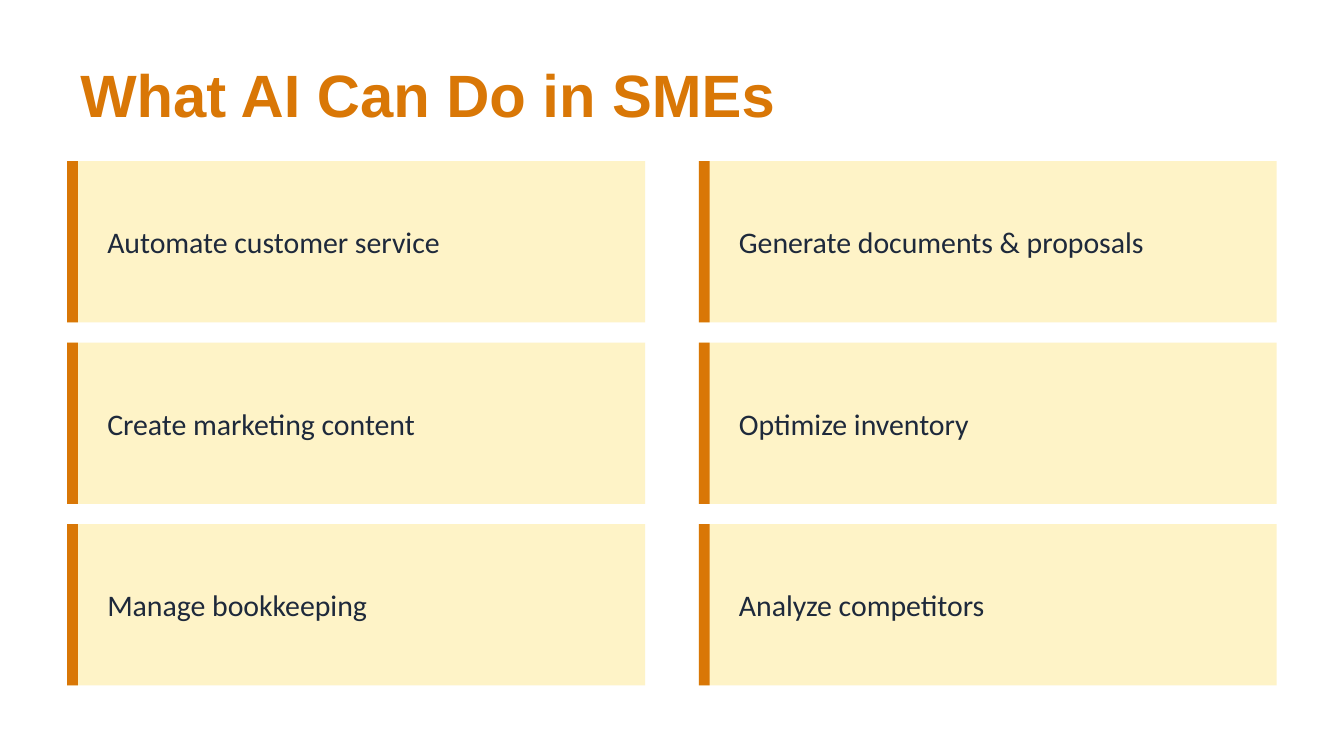
"""Build a slide of six tasks that AI can take on in small firms."""
from pptx import Presentation
from pptx.dml.color import RGBColor
from pptx.enum.shapes import MSO_SHAPE
from pptx.enum.text import MSO_ANCHOR
from pptx.util import Inches, Pt

ORANGE = "D97706"
CREAM = "FEF3C7"
NAVY = "1E293B"
TASKS = [
    ["Automate customer service", "Create marketing content", "Manage bookkeeping"],
    ["Generate documents & proposals", "Optimize inventory", "Analyze competitors"],
]


def color(code):
    """Turn a hex string into a colour."""
    return RGBColor.from_string(code)


def add_bar(slide, left, top, width, height, fill):
    """Add a plain filled rectangle."""
    bar = slide.shapes.add_shape(
        MSO_SHAPE.RECTANGLE, Inches(left), Inches(top), Inches(width), Inches(height)
    )
    bar.shadow.inherit = False
    bar.fill.solid()
    bar.fill.fore_color.rgb = color(fill)
    bar.line.fill.background()


def add_text(slide, left, top, width, height, words, size, face, ink, bold=False):
    """Add one line of text, centred vertically in its box."""
    box = slide.shapes.add_textbox(
        Inches(left), Inches(top), Inches(width), Inches(height)
    )
    frame = box.text_frame
    frame.word_wrap = True
    frame.vertical_anchor = MSO_ANCHOR.MIDDLE
    run = frame.paragraphs[0].add_run()
    run.text = words
    run.font.size = Pt(size)
    run.font.name = face
    run.font.bold = bold
    run.font.color.rgb = color(ink)


def add_card(slide, left, top, task):
    """Add a cream card with an orange edge and its task."""
    add_bar(slide, left, top, 4.3, 1.2, CREAM)
    add_bar(slide, left, top, 0.08, 1.2, ORANGE)
    add_text(slide, left + 0.2, top + 0.15, 3.9, 0.9, task, 16, "Calibri", NAVY)


def main():
    """Build and save the deck."""
    deck = Presentation()
    deck.slide_width = Inches(10)
    deck.slide_height = Inches(10 * 9 / 16)
    slide = deck.slides.add_slide(deck.slide_layouts[6])
    add_text(slide, 0.5, 0.4, 9, 0.6, "What AI Can Do in SMEs", 32, "Arial", ORANGE, True)
    for col, tasks in enumerate(TASKS):
        for row, task in enumerate(tasks):
            add_card(slide, 0.5 + 4.7 * col, 1.2 + 1.35 * row, task)
    deck.save("out.pptx")


if __name__ == "__main__":
    main()
